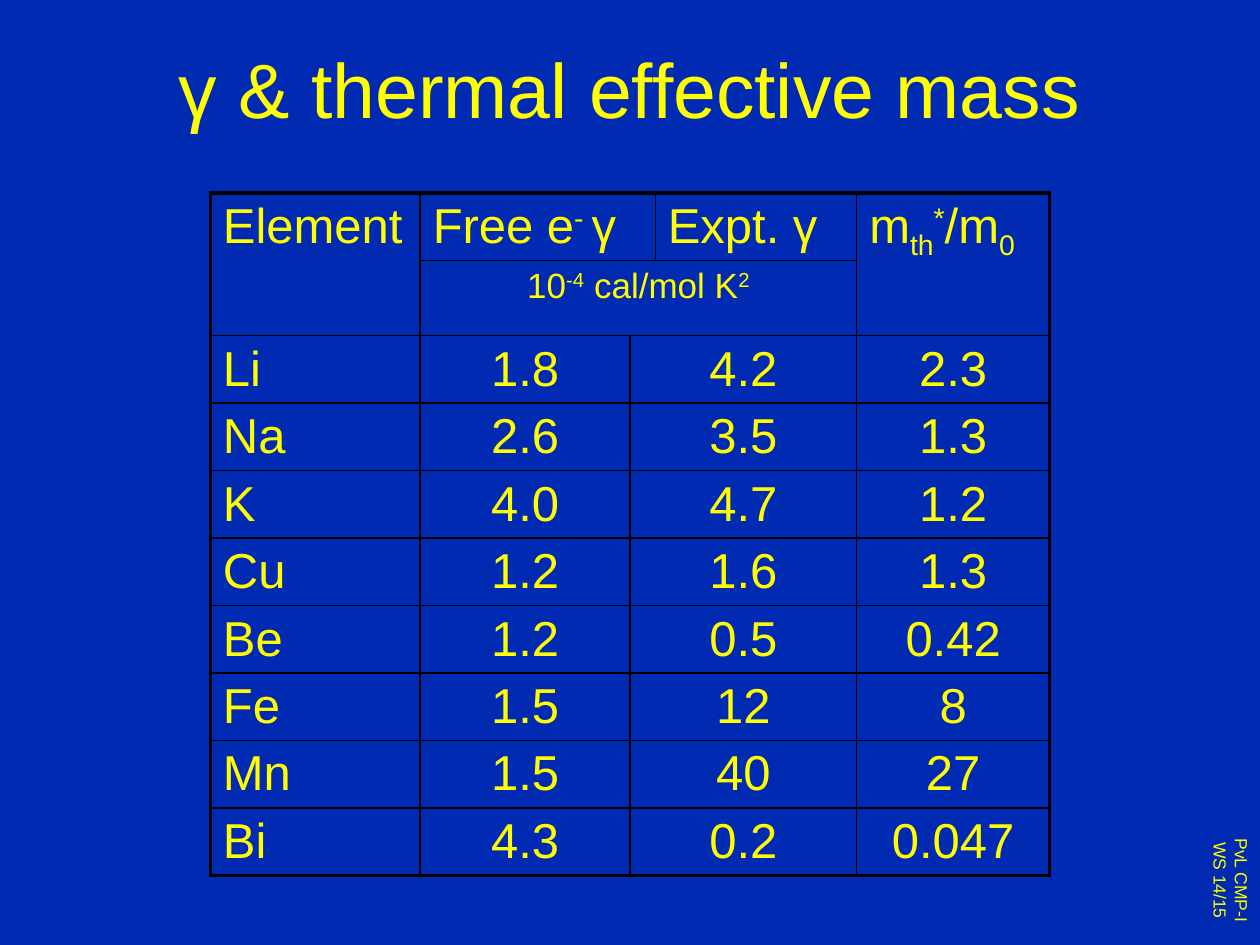
from lxml.etree import SubElement
from pptx import Presentation
from pptx.dml.color import RGBColor
from pptx.enum.text import MSO_ANCHOR, PP_ALIGN
from pptx.oxml.ns import qn
from pptx.util import Cm, Pt

YELLOW, BLUE, BLACK = "FFFF00", "002AB2", "000000"
TEXT_FORMAT = {"name": "Arial", "bold": False}


def color(hex_string):
    return RGBColor.from_string(hex_string)


def write(para, spans, size, align):
    """Fill a paragraph with (text, baseline shift in percent) spans."""
    para.alignment = align
    for text, shift in spans:
        span = para.add_run()
        span.text = text
        for name, value in {**TEXT_FORMAT, "size": Pt(size)}.items():
            setattr(span.font, name, value)
        span.font.color.rgb = color(YELLOW)
        if shift:
            span.font._element.set("baseline", str(shift * 1000))


deck = Presentation()
deck.slide_width, deck.slide_height = Cm(25.4), Cm(19.05)
page = deck.slides.add_slide(deck.slide_layouts[5])
page.background.fill.solid()
page.background.fill.fore_color.rgb = color(BLUE)

# Course label, reading downwards
label = page.shapes.add_textbox(Cm(24), Cm(16.76), Cm(1.37), Cm(1.98))
label.text_frame.word_wrap = False
label.text_frame._txBody.bodyPr.set("vert", "vert")
write(label.text_frame.paragraphs[0], [("PvL CMP-I", 0)], 10, PP_ALIGN.CENTER)
write(label.text_frame.add_paragraph(), [("WS 14/15", 0)], 10, PP_ALIGN.CENTER)

# Title
title = page.shapes.title
title_place = {"left": Cm(1.9), "top": Cm(0.18), "width": Cm(21.6), "height": Cm(3.18)}
for name, value in title_place.items():
    setattr(title, name, value)
title.text_frame.vertical_anchor = MSO_ANCHOR.MIDDLE
write(title.text_frame.paragraphs[0], [("γ & thermal effective mass", 0)], 44, PP_ALIGN.CENTER)

# Table contents: (row, column, spans, size, alignment)
elements = [
    ("Li", "1.8", "4.2", "2.3"),
    ("Na", "2.6", "3.5", "1.3"),
    ("K", "4.0", "4.7", "1.2"),
    ("Cu", "1.2", "1.6", "1.3"),
    ("Be", "1.2", "0.5", "0.42"),
    ("Fe", "1.5", "12", "8"),
    ("Mn", "1.5", "40", "27"),
    ("Bi", "4.3", "0.2", "0.047"),
]
contents = [
    (0, 0, [("Element", 0)], 28, PP_ALIGN.LEFT),
    (0, 1, [("Free e", 0), ("- ", 30), ("γ", 0)], 28, PP_ALIGN.LEFT),
    (0, 3, [("Expt. γ", 0)], 28, PP_ALIGN.LEFT),
    (0, 4, [("m", 0), ("th", -25), ("*", 30), ("/m", 0), ("0", -25)], 28, PP_ALIGN.LEFT),
    (1, 1, [("10", 0), ("-4", 30), (" cal/mol K", 0), ("2", 30)], 20, PP_ALIGN.CENTER),
]
for row, values in enumerate(elements, start=2):
    for column, value in zip((0, 1, 2, 4), values):
        align = PP_ALIGN.CENTER if column else PP_ALIGN.LEFT
        contents.append((row, column, [(value, 0)], 28, align))

# Table grid: the values of the second column start left of their heading
column_widths = [4.23, 4.23, 0.51, 4.06, 3.89]
row_heights = [1.36, 1.5] + [1.36] * len(elements)
row_count, column_count = len(row_heights), len(column_widths)
table = page.shapes.add_table(
    row_count, column_count, Cm(4.24), Cm(3.89), Cm(sum(column_widths)), Cm(sum(row_heights))
).table
table.first_row = table.horz_banding = False
for column, width in zip(table.columns, column_widths):
    column.width = Cm(width)
for row, height in zip(table.rows, row_heights):
    row.height = Cm(height)

merges = [(0, 0, 1, 0), (0, 1, 0, 2), (0, 4, 1, 4), (1, 1, 1, 3)]
merges += [(row, 2, row, 3) for row in range(2, row_count)]
for top, left, bottom, right in merges:
    table.cell(top, left).merge(table.cell(bottom, right))

for row, column, spans, size, align in contents:
    cell = table.cell(row, column)
    write(cell.text_frame.paragraphs[0], spans, size, align)
    on_frame = {
        "a:lnL": column == 0,
        "a:lnR": column + cell.span_width == column_count,
        "a:lnT": row == 0,
        "a:lnB": row + cell.span_height == row_count,
    }
    properties = cell._tc.get_or_add_tcPr()
    for tag, outer in on_frame.items():
        line = SubElement(properties, qn(tag), w=str(Pt(2.25 if outer else 1)))
        SubElement(SubElement(line, qn("a:solidFill")), qn("a:srgbClr"), val=BLACK)

for cell in table.iter_cells():
    cell.fill.background()

deck.save("out.pptx")
